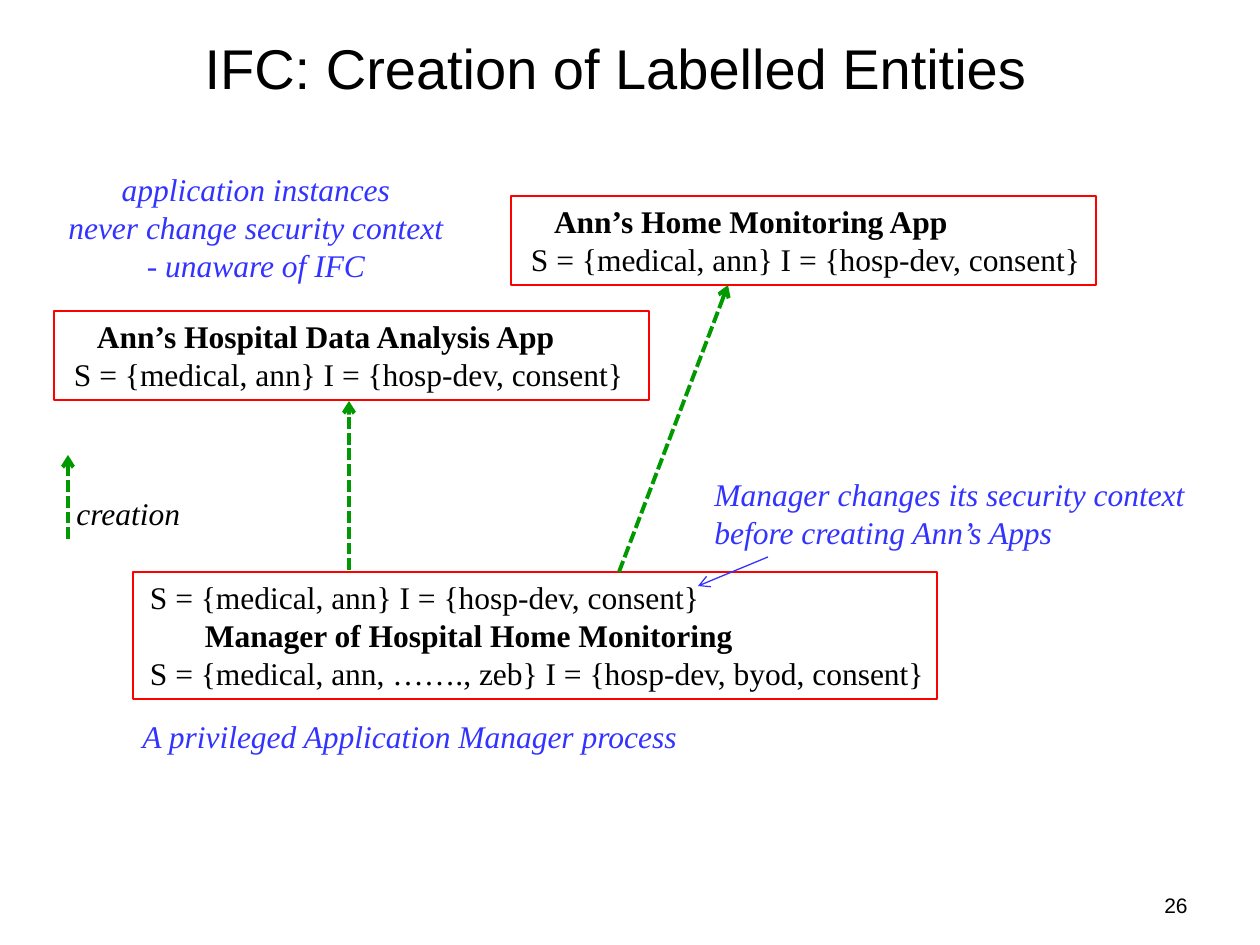
from dataclasses import dataclass

from lxml import etree
from pptx import Presentation
from pptx.dml.color import RGBColor
from pptx.enum.dml import MSO_LINE
from pptx.enum.shapes import MSO_CONNECTOR, MSO_SHAPE
from pptx.enum.text import MSO_ANCHOR, PP_ALIGN
from pptx.oxml.ns import qn
from pptx.util import Pt

LEFT, CENTER, RIGHT = PP_ALIGN.LEFT, PP_ALIGN.CENTER, PP_ALIGN.RIGHT
TOP, MIDDLE = MSO_ANCHOR.TOP, MSO_ANCHOR.MIDDLE
RECTANGLE = MSO_SHAPE.RECTANGLE
STRAIGHT = MSO_CONNECTOR.STRAIGHT
DASHED = MSO_LINE.SQUARE_DOT
TITLE_ONLY = 5
EMU_PER_PX = 914400 / 126


@dataclass(frozen=True)
class Theme:
    heading_font: str = "Arial"
    body_font: str = "Times New Roman"
    title_size: int = 32
    body_size: int = 18
    number_size: int = 12
    ink: str = "000000"
    note: str = "3333FF"
    frame: str = "FF0000"
    creation: str = "009900"


def px(length):
    return round(length * EMU_PER_PX)


def rgb(value):
    return RGBColor.from_string(value)


class SlideBuilder:
    def __init__(self, page, theme):
        self.page = page
        self.theme = theme

    def set_text(self, frame, lines, size, font, color, align=LEFT, anchor=TOP, italic=False):
        frame.text = "\n".join(lines)
        frame.vertical_anchor = anchor
        for para in frame.paragraphs:
            para.alignment = align
            for span in para.runs:
                span.font.size = Pt(size)
                span.font.name = font
                span.font.color.rgb = rgb(color)
                span.font.italic = italic

    def title(self, text, left, top, width, height):
        box = self.page.shapes.title
        box.left, box.top, box.width, box.height = map(px, (left, top, width, height))
        self.set_text(box.text_frame, [text], self.theme.title_size,
                      self.theme.heading_font, self.theme.ink, CENTER, MIDDLE)

    def number(self, text, left, top, width, height):
        box = self.page.shapes.add_textbox(*map(px, (left, top, width, height)))
        box.text_frame.word_wrap = True
        self.set_text(box.text_frame, [text], self.theme.number_size,
                      self.theme.heading_font, self.theme.ink, RIGHT)

    def note(self, lines, left, top, width, height, color, align=LEFT):
        box = self.page.shapes.add_textbox(*map(px, (left, top, width, height)))
        box.text_frame.word_wrap = False
        self.set_text(box.text_frame, lines, self.theme.body_size,
                      self.theme.body_font, color, align, italic=True)

    def entity(self, lines, name_index, name_indent, left, top, width, height, inset=12):
        box = self.page.shapes.add_shape(RECTANGLE, *map(px, (left, top, width, height)))
        box.shadow.inherit = False
        box.fill.background()
        box.line.color.rgb = rgb(self.theme.frame)
        box.line.width = Pt(1.5)
        frame = box.text_frame
        frame.word_wrap = True
        frame.margin_left = px(inset)
        frame.margin_right = 0
        self.set_text(frame, lines, self.theme.body_size, self.theme.body_font, self.theme.ink)
        for index, para in enumerate(frame.paragraphs):
            is_name = index == name_index
            para.runs[0].font.bold = is_name
            indent = name_indent if is_name else 8
            para._p.get_or_add_pPr().set("marL", str(px(indent)))

    def arrow(self, start, end, color, weight, dash=None):
        line = self.page.shapes.add_connector(STRAIGHT, *map(px, (*start, *end)))
        line.line.color.rgb = rgb(color)
        line.line.width = Pt(weight)
        if dash is not None:
            line.line.dash_style = dash
        properties = line._element.spPr
        etree.SubElement(properties.find(qn("a:ln")), qn("a:tailEnd"), type="arrow")
        etree.SubElement(properties, qn("a:effectLst"))

    def creation_arrow(self, start, end):
        self.arrow(start, end, self.theme.creation, 2.25, DASHED)


def main():
    deck = Presentation()
    deck.slide_width, deck.slide_height = px(1260), px(945)
    page = deck.slides.add_slide(deck.slide_layouts[TITLE_ONLY])
    theme = Theme()
    slide = SlideBuilder(page, theme)
    app_context = "S = {medical, ann} I = {hosp-dev, consent}"
    manager_context = "S = {medical, ann, ……., zeb} I = {hosp-dev, byod, consent}"

    slide.number("26", 903, 886, 297, 40)
    slide.title("IFC: Creation of Labelled Entities", 49, 29, 1134, 77)

    slide.entity(["Ann’s Home Monitoring App", app_context], 0, 31, 511, 196, 585, 89)
    slide.entity(["Ann’s Hospital Data Analysis App", app_context], 0, 31, 54, 311, 595, 89)
    slide.entity([app_context, "Manager of Hospital Home Monitoring", manager_context],
                 1, 63, 133, 572, 804, 127, inset=9)

    slide.creation_arrow((619, 572), (728, 285))
    slide.creation_arrow((349, 570), (349, 401))
    slide.creation_arrow((68, 539), (68, 455))
    slide.arrow((768, 557), (698, 586), theme.note, 0.75)

    slide.note(["creation"], 64, 488, 139, 50, theme.ink)
    slide.note(["Manager changes its security context", "before creating Ann’s Apps"],
               702, 469, 500, 89, theme.note)
    slide.note(["A privileged Application Manager process"], 130, 711, 566, 50, theme.note)
    slide.note(["application instances", "never change security context", "- unaware of IFC"],
               54, 164, 404, 127, theme.note, CENTER)

    deck.save("out.pptx")


if __name__ == "__main__":
    main()
